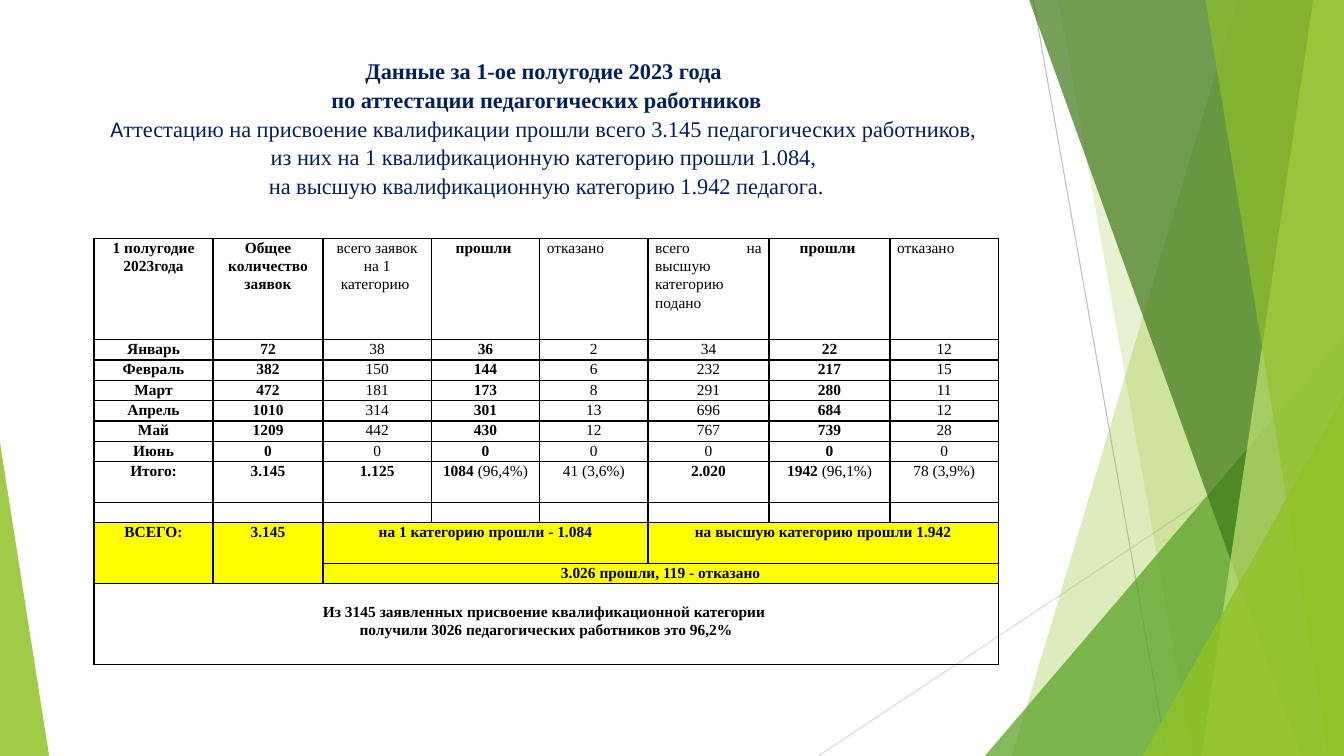
from lxml.etree import SubElement
from pptx import Presentation
from pptx.dml.color import RGBColor
from pptx.enum.shapes import MSO_CONNECTOR as Connector, MSO_SHAPE as Shape
from pptx.enum.text import MSO_ANCHOR as Anchor, PP_ALIGN as Align
from pptx.oxml.ns import qn
from pptx.util import Cm, Pt

SERIF, SANS = "Times New Roman", "Calibri"
NAVY, BLACK, YELLOW = "002060", "000000", "FFFF00"
WIDTH, HEIGHT, BLEED = 33.87, 19.05, -0.02
SPACING = 1.07

TITLE_LINES = [
    [("Данные за 1-ое полугодие 2023 года ", SERIF, True)],
    [("по аттестации педагогических работников", SERIF, True)],
    [("А", SANS, False),
     ("ттестацию на присвоение квалификации прошли всего 3.145 педагогических работников, ", SERIF, False)],
    [("из них на 1 квалификационную категорию прошли 1.084, ", SERIF, False)],
    [("на высшую квалификационную категорию 1.942 педагога.", SERIF, False)],
]
HEADERS = ["1 полугодие 2023года", "Общее количество заявок", "всего заявок на 1 категорию ", "прошли ",
           "отказано", "всего на высшую категорию подано", "прошли ", "отказано"]
MONTHS = [
    ["Январь", 72, 38, 36, 2, 34, 22, 12],
    ["Февраль", 382, 150, 144, 6, 232, 217, 15],
    ["Март", 472, 181, 173, 8, 291, 280, 11],
    ["Апрель", 1010, 314, 301, 13, 696, 684, 12],
    ["Май", 1209, 442, 430, 12, 767, 739, 28],
    ["Июнь", 0, 0, 0, 0, 0, 0, 0],
]
TOTALS = ["Итого:", "3.145", "1.125", "1084 (96,4%)", "41 (3,6%)", "2.020", "1942 (96,1%)", "78 (3,9%)"]
BOLD_COLUMNS = {0, 1, 3, 6}
BOLD_TOTALS = BOLD_COLUMNS | {2, 5}
JUSTIFIED_HEADERS = {4, 5, 7}
SUMMARY = [
    (9, 0, 10, 0, "ВСЕГО:"),
    (9, 1, 10, 1, "3.145"),
    (9, 2, 9, 4, "на 1 категорию прошли - 1.084"),
    (9, 5, 9, 7, "на высшую категорию прошли 1.942"),
    (10, 2, 10, 7, "3.026 прошли, 119 - отказано"),
]
CONCLUSION = ("Из 3145 заявленных присвоение квалификационной категории \n"
              "получили 3026 педагогических работников это 96,2%")
COLUMN_WIDTHS = [3, 2.77, 2.73, 2.73, 2.73, 3.05, 3.05, 2.73]
ROW_UNITS = [5, 1, 1, 1, 1, 1, 1, 2, 1, 2, 1, 4]
ROW_UNIT = 0.512

RAYS = [(26.04, 0, 29.41, HEIGHT, "BFBFBF"), (WIDTH, 10.24, 20.62, HEIGHT, "D9D9D9")]
FACETS = [
    ("band", (31.19, 25.5), "90C226", 30),
    ("band", (26.67, 30.05), "90C226", 20),
    ("triangle", (24.82, 8.46, 9.05, 1), "54A021", 72),
    ("band", (25.93, 32.79), "3F7819", 70),
    ("band", (33.1, 30.28), "C0E474", 70),
    ("band", (30.38, 33.48), "90C226", 65),
    ("triangle", (28.8, 9.98, 5.07, 1), "90C226", 80),
    ("triangle", (0, 11.15, 1.24, 0), "90C226", 85),
]


def color(value):
    return RGBColor.from_string(value)


def style(span, font, size, value, bold):
    span.font.name, span.font.size, span.font.bold = font, Pt(size), bold
    span.font.color.rgb = color(value)


def add_ray(page, left, top, right, bottom, value):
    ray = page.shapes.add_connector(Connector.STRAIGHT, Cm(left), Cm(top), Cm(right), Cm(bottom))
    ray.line.color.rgb, ray.line.width = color(value), Pt(0.75)
    SubElement(ray._element.spPr, qn("a:effectLst"))


def add_facet(page, kind, place, value, opacity):
    if kind == "band":
        top_left, bottom_left = place
        builder = page.shapes.build_freeform(Cm(top_left), Cm(BLEED))
        corners = [(WIDTH, BLEED), (WIDTH, HEIGHT), (bottom_left, HEIGHT)]
        builder.add_line_segments([(Cm(x), Cm(y)) for x, y in corners], close=True)
        facet = builder.convert_to_shape()
    else:
        left, top, width, apex = place
        facet = page.shapes.add_shape(Shape.ISOSCELES_TRIANGLE, Cm(left), Cm(top), Cm(width), Cm(HEIGHT - top))
        facet.adjustments[0] = apex
    facet.shadow.inherit = False
    facet.fill.solid()
    facet.fill.fore_color.rgb = color(value)
    tint = facet._element.spPr.find(".//" + qn("a:srgbClr"))
    SubElement(tint, qn("a:alpha"), val=str(opacity * 1000))
    facet.line.fill.background()


def add_title(page):
    box = page.shapes.add_textbox(Cm(1.83), Cm(1.27), Cm(23.88), Cm(3.66))
    box.text_frame.word_wrap = True
    box.text_frame.vertical_anchor = Anchor.TOP
    para = box.text_frame.paragraphs[0]
    para.alignment, para.line_spacing = Align.CENTER, SPACING
    for index, line in enumerate(TITLE_LINES):
        if index:
            para.add_line_break()
        for text, font, bold in line:
            span = para.add_run()
            span.text = text
            style(span, font, 16, NAVY, bold)


def prepare(cell):
    cell.margin_left = cell.margin_right = Cm(0.18)
    cell.margin_top = cell.margin_bottom = 0
    properties = cell._tc.get_or_add_tcPr()
    for side in ("lnL", "lnR", "lnT", "lnB"):
        border = SubElement(properties, qn("a:" + side), w=str(Pt(1)))
        SubElement(SubElement(border, qn("a:solidFill")), qn("a:srgbClr"), val=BLACK)
    cell.fill.background()
    ending = SubElement(cell.text_frame.paragraphs[0]._p, qn("a:endParaRPr"))
    ending.set("sz", "1100")


def write(cell, text, bold, align=Align.CENTER):
    cell.text_frame.text = text
    for para in cell.text_frame.paragraphs:
        para.alignment, para.line_spacing = align, SPACING
        for span in para.runs:
            style(span, SERIF, 11, BLACK, bold)


def add_table(page):
    frame = page.shapes.add_table(len(ROW_UNITS), len(COLUMN_WIDTHS), Cm(2.37), Cm(6),
                                  Cm(sum(COLUMN_WIDTHS)), Cm(sum(ROW_UNITS) * ROW_UNIT))
    table = frame.table
    table.first_row = table.horz_banding = False
    for column, width in zip(table.columns, COLUMN_WIDTHS):
        column.width = Cm(width)
    for row, units in zip(table.rows, ROW_UNITS):
        row.height = Cm(units * ROW_UNIT)
    for cell in table.iter_cells():
        prepare(cell)

    for column, text in enumerate(HEADERS):
        align = Align.JUSTIFY if column in JUSTIFIED_HEADERS else Align.CENTER
        write(table.cell(0, column), text, column in BOLD_COLUMNS, align)
    for row, values in enumerate(MONTHS, 1):
        for column, value in enumerate(values):
            write(table.cell(row, column), str(value), column in BOLD_COLUMNS)
    for column, text in enumerate(TOTALS):
        cell = table.cell(len(MONTHS) + 1, column)
        count, bracket, share = text.partition("(")
        write(cell, count, column in BOLD_TOTALS)
        if bracket:
            span = cell.text_frame.paragraphs[0].add_run()
            span.text = bracket + share
            style(span, SERIF, 11, BLACK, False)

    for top, left, bottom, right, text in SUMMARY:
        cell = table.cell(top, left)
        cell.merge(table.cell(bottom, right))
        write(cell, text, True)
        cell.fill.solid()
        cell.fill.fore_color.rgb = color(YELLOW)
    conclusion = table.cell(11, 0)
    conclusion.merge(table.cell(11, 7))
    conclusion.margin_top = Cm(0.48)
    write(conclusion, CONCLUSION, True)


def main():
    """Build the half-year attestation slide."""
    deck = Presentation()
    deck.slide_width, deck.slide_height = Cm(WIDTH), Cm(HEIGHT)
    page = deck.slides.add_slide(deck.slide_layouts[6])
    for ray in RAYS:
        add_ray(page, *ray)
    for facet in FACETS:
        add_facet(page, *facet)
    add_title(page)
    add_table(page)
    deck.save("out.pptx")


if __name__ == "__main__":
    main()
